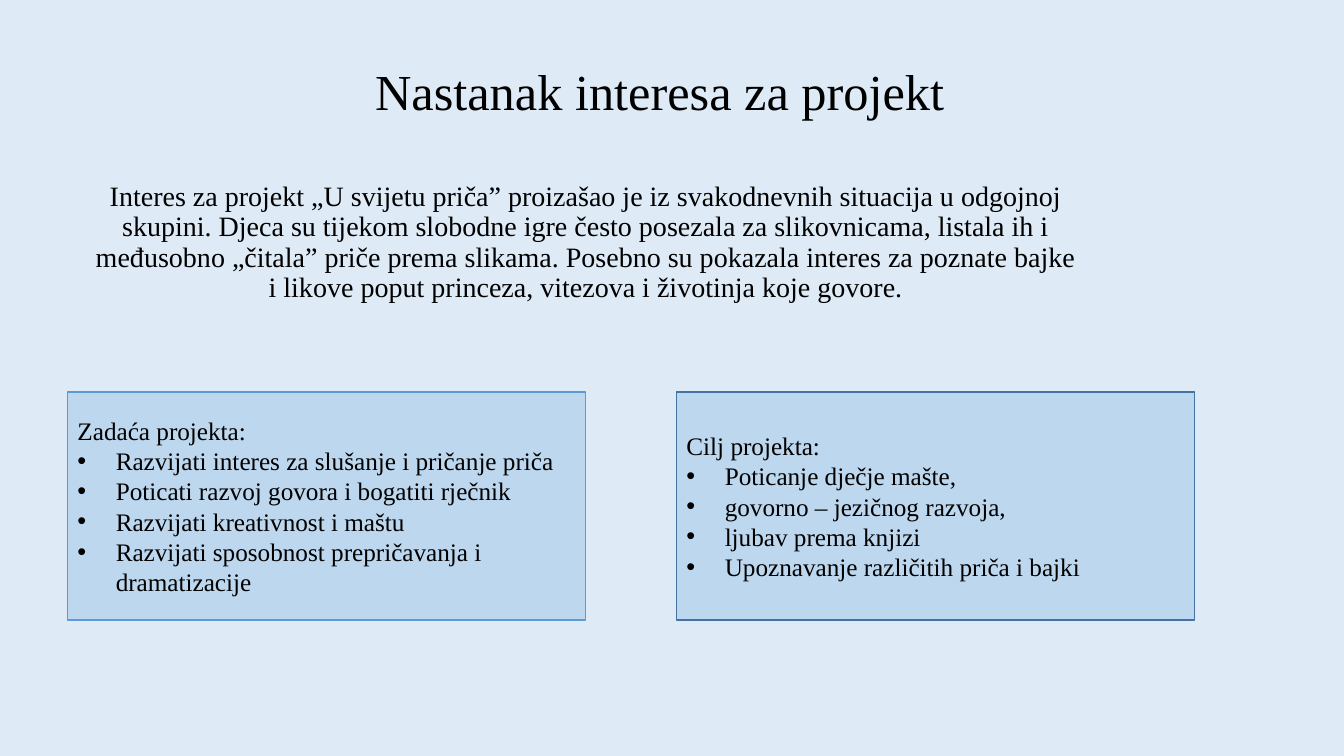
import pptx
import pptx.dml.color
import pptx.enum.shapes
import pptx.enum.text
import pptx.oxml
import pptx.oxml.ns
import pptx.util

ALIGN = pptx.enum.text.PP_ALIGN
ANCHOR = pptx.enum.text.MSO_ANCHOR


def color(hex_value):
    return pptx.dml.color.RGBColor.from_string(hex_value)


def write(paragraph, text, size=18, font="Times New Roman", ink="000000",
          align=ALIGN.LEFT, spacing=1.0, bullet=False):
    if bullet:
        properties = paragraph._p.get_or_add_pPr()
        indent = pptx.util.Inches(0.38)
        properties.set("marL", str(indent))
        properties.set("indent", str(-indent))
        namespace = pptx.oxml.ns.nsdecls("a")
        properties.append(pptx.oxml.parse_xml(f'<a:buFont {namespace} typeface="Arial"/>'))
        properties.append(pptx.oxml.parse_xml(f'<a:buChar {namespace} char="•"/>'))
    paragraph.alignment = align
    paragraph.line_spacing = spacing
    paragraph.space_before = pptx.util.Pt(0)
    run = paragraph.add_run()
    run.text = text
    run.font.size = pptx.util.Pt(size)
    run.font.name = font
    run.font.color.rgb = color(ink)


class ProjectSlide:
    """Places are percentages of the slide's width and height."""

    background = "DEEBF7"
    panel_fill = "BDD7EE"

    def __init__(self, deck):
        self.width, self.height = deck.slide_width, deck.slide_height
        self.slide = deck.slides.add_slide(deck.slide_layouts[0])
        self.slide.background.fill.solid()
        self.slide.background.fill.fore_color.rgb = color(self.background)

    def area(self, left, top, width, height):
        return (int(self.width * left / 100), int(self.height * top / 100),
                int(self.width * width / 100), int(self.height * height / 100))

    def placeholder(self, index, place, text, size, anchor):
        holder = self.slide.placeholders[index]
        holder.left, holder.top, holder.width, holder.height = self.area(*place)
        frame = holder.text_frame
        frame.word_wrap = True
        frame.auto_size = pptx.enum.text.MSO_AUTO_SIZE.NONE
        frame.vertical_anchor = anchor
        write(frame.paragraphs[0], text, size=size, align=ALIGN.CENTER, spacing=0.9)

    def panel(self, place, border, heading, points):
        box = self.slide.shapes.add_shape(
            pptx.enum.shapes.MSO_SHAPE.RECTANGLE, *self.area(*place))
        box.shadow.inherit = False
        box.fill.solid()
        box.fill.fore_color.rgb = color(self.panel_fill)
        box.line.color.rgb = color(border)
        box.line.width = pptx.util.Pt(1)
        frame = box.text_frame
        frame.word_wrap = True
        frame.vertical_anchor = ANCHOR.MIDDLE
        write(frame.paragraphs[0], heading)
        for point in points:
            write(frame.add_paragraph(), point, bullet=True)


def main():
    deck = pptx.Presentation()
    deck.slide_width = pptx.util.Inches(13.33)
    deck.slide_height = pptx.util.Inches(7.5)
    project = ProjectSlide(deck)

    # Title and introduction
    project.placeholder(0, (26.18, 6.27, 45.84, 10.53),
                        "Nastanak interesa za projekt", 36, ANCHOR.BOTTOM)
    project.placeholder(
        1, (6.08, 23.47, 75.02, 24.13),
        "Interes za projekt „U svijetu priča” proizašao je iz svakodnevnih situacija "
        "u odgojnoj skupini. Djeca su tijekom slobodne igre često posezala za "
        "slikovnicama, listala ih i međusobno „čitala” priče prema slikama. Posebno su "
        "pokazala interes za poznate bajke i likove poput princeza, vitezova i "
        "životinja koje govore.", 20, ANCHOR.TOP)

    # Task and goal panels, side by side
    panels = [
        ("5B9BD5", "Zadaća projekta:", [
            "Razvijati interes za slušanje i pričanje priča",
            "Poticati razvoj govora i bogatiti rječnik",
            "Razvijati kreativnost i maštu",
            "Razvijati sposobnost prepričavanja i dramatizacije"]),
        ("43739E", "Cilj projekta:", [
            "Poticanje dječje mašte,",
            "govorno – jezičnog razvoja,",
            "ljubav prema knjizi",
            "Upoznavanje različitih priča i bajki"]),
    ]
    for column, (border, heading, points) in enumerate(panels):
        place = (5.03 + 45.31 * column, 51.87, 38.56, 30.13)
        project.panel(place, border, heading, points)

    deck.save("out.pptx")


if __name__ == "__main__":
    main()
